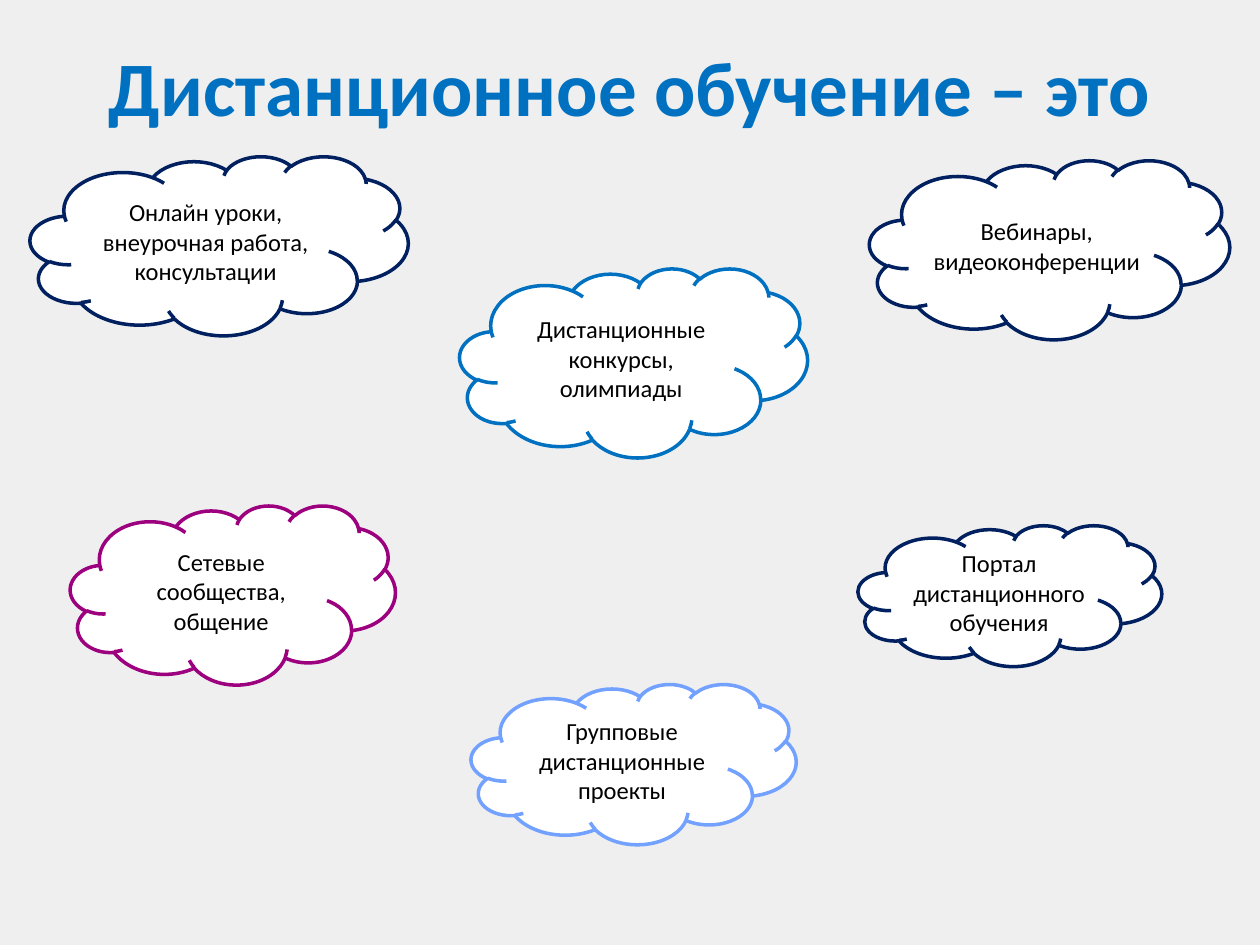
import pptx
import pptx.dml.color
import pptx.enum.shapes
import pptx.enum.text
import pptx.util

Cm = pptx.util.Cm
NAVY = "002060"
BLUE = "0070C0"

CLOUDS = [
    ("Сетевые сообщества, общение", "9C007F", (1.42, 10.19, 6.55, 3.61)),
    ("Онлайн уроки, внеурочная работа, консультации", NAVY, (0.61, 3.15, 7.62, 3.61)),
    ("Дистанционные конкурсы, олимпиады", BLUE, (9.27, 5.41, 7.01, 3.81)),
    ("Вебинары, видеоконференции", NAVY, (17.53, 3.23, 7.26, 3.61)),
    ("Групповые дистанционные проекты", "72A1FF", (9.5, 13.79, 6.55, 3.23)),
    ("Портал дистанционного обучения", NAVY, (17.3, 10.59, 6.12, 2.84)),
]


def paint(color_format, color):
    """Set a fill, line or font colour from a hex string."""
    color_format.rgb = pptx.dml.color.RGBColor.from_string(color)


def write(frame, text, size, color, bold=False):
    """Write one centred run in the middle of a text frame."""
    frame.word_wrap = True
    frame.vertical_anchor = pptx.enum.text.MSO_ANCHOR.MIDDLE
    paragraph = frame.paragraphs[0]
    paragraph.alignment = pptx.enum.text.PP_ALIGN.CENTER
    run = paragraph.add_run()
    run.text = text
    run.font.name = "Calibri"
    run.font.size = pptx.util.Pt(size)
    run.font.bold = bold
    paint(run.font.color, color)


def add_heading(slide, text, box):
    """Place the slide heading in the given box."""
    heading = slide.shapes.add_textbox(*map(Cm, box))
    write(heading.text_frame, text, 44, BLUE, bold=True)


def add_cloud(slide, activity, outline, box):
    """Place a white cloud naming one learning activity."""
    cloud = slide.shapes.add_shape(
        pptx.enum.shapes.MSO_SHAPE.CLOUD, *map(Cm, box))
    cloud.shadow.inherit = False
    cloud.fill.solid()
    paint(cloud.fill.fore_color, "FFFFFF")
    paint(cloud.line.color, outline)
    cloud.line.width = pptx.util.Pt(2)
    write(cloud.text_frame, activity, 14, "000000")


def main():
    """Build and save the slide."""
    deck = pptx.Presentation()
    deck.slide_width, deck.slide_height = Cm(25.4), Cm(19.05)
    slide = deck.slides.add_slide(deck.slide_layouts[6])
    slide.background.fill.solid()
    paint(slide.background.fill.fore_color, "EFEFEF")
    add_heading(slide, "Дистанционное обучение – это", (1.27, 0.13, 22.86, 3.18))
    for activity, outline, box in CLOUDS:
        add_cloud(slide, activity, outline, box)
    deck.save("out.pptx")


if __name__ == "__main__":
    main()
